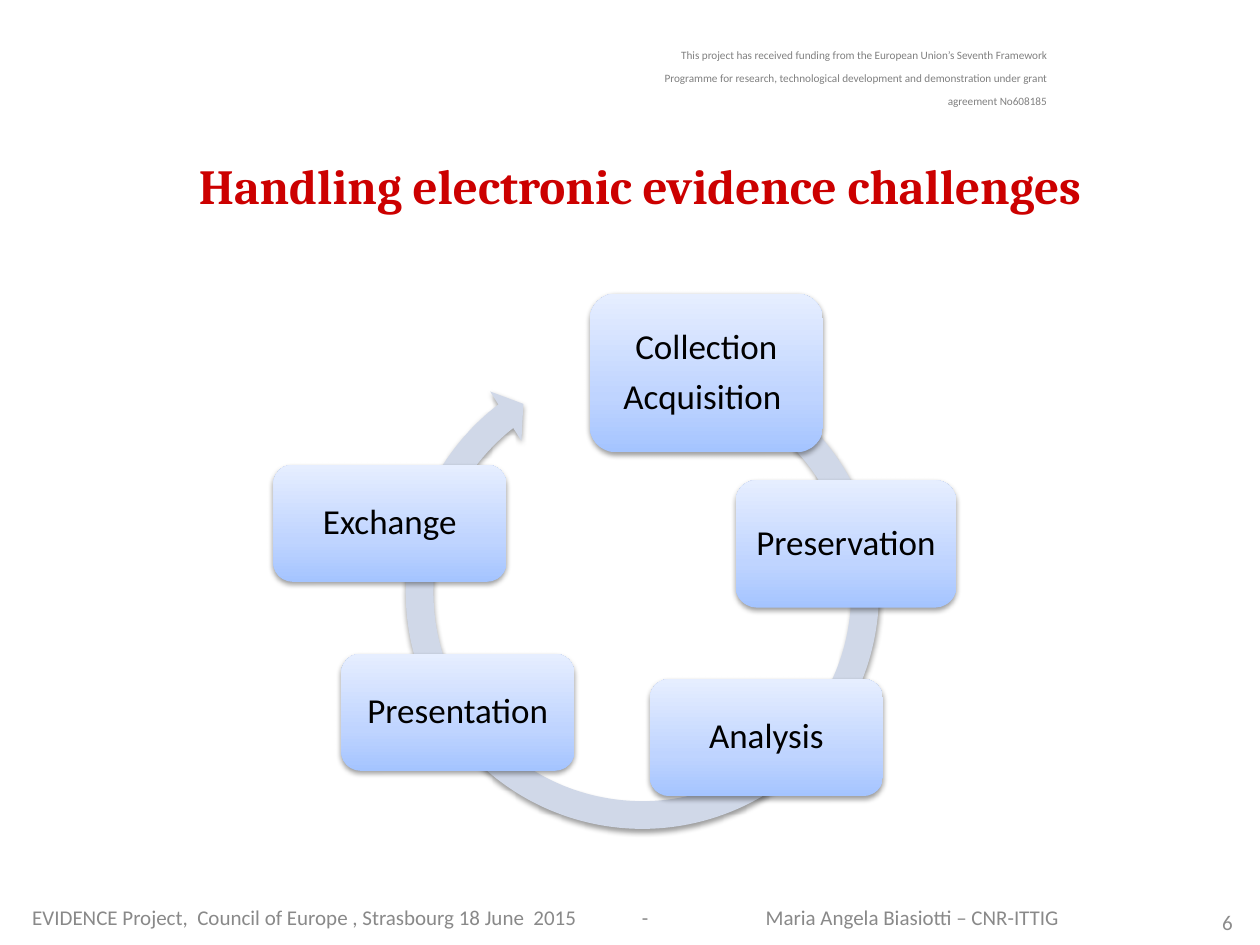
from copy import deepcopy

from pptx import Presentation
from pptx import util as u
from pptx.dml.color import RGBColor
from pptx.enum import shapes, text
from pptx.oxml import parse_xml
from pptx.oxml.ns import nsdecls, qn

LEFT, MID, RIGHT = text.PP_ALIGN.LEFT, text.PP_ALIGN.CENTER, text.PP_ALIGN.RIGHT
BLUES = ((0, "A4C4FF"), (0.35, "BFD4FF"), (1, "E6EEFF"))
STEPS = (
    (11.89, 5.92, 4.7, 3.2, ("Collection", "Acquisition ")),
    (14.83, 9.68, 4.45, 2.57, ("Preservation",)),
    (13.1, 13.69, 4.7, 2.36, ("Analysis",)),
    (6.88, 13.18, 4.7, 2.36, ("Presentation",)),
    (5.51, 9.37, 4.7, 2.36, ("Exchange",)),
)
NOTES = (
    (0.4, 12, "EVIDENCE Project,  Council of Europe , Strasbourg 18 June  2015"),
    (12.69, 1, "-"),
    (15.09, 8.6, " Maria Angela Biasiotti – CNR-ITTIG"),
)


def tint(code):
    return RGBColor.from_string(code)


def place(*vals):
    return [u.Cm(val) for val in vals]


def write(para, words, size, code, face="Calibri", bold=False):
    run = para.add_run()
    run.text = words
    font = run.font
    font.size, font.name, font.bold = u.Pt(size), face, bold
    font.color.rgb = tint(code)
    return run


def setup(frame, pad=None, anchor=text.MSO_ANCHOR.MIDDLE):
    frame.word_wrap = True
    frame.auto_size = text.MSO_AUTO_SIZE.NONE
    frame.vertical_anchor = anchor
    if pad is not None:
        frame.margin_left = frame.margin_right = u.Cm(pad)
        frame.margin_top = frame.margin_bottom = u.Cm(pad)


def label(slide, box, words, size, code, align, **opts):
    frame = slide.shapes.add_textbox(*place(*box)).text_frame
    setup(frame, **opts)
    para = frame.paragraphs[0]
    para.alignment = align
    return write(para, words, size, code)


def shade(shape):
    shape.shadow.inherit = False
    glow = shape._element.spPr.find(qn("a:effectLst"))
    glow.append(parse_xml(
        f'<a:outerShdw {nsdecls("a")} blurRad="{u.Pt(3.1)}" dist="{u.Pt(1.6)}" '
        'dir="5400000" rotWithShape="0"><a:srgbClr val="000000">'
        '<a:alpha val="38000"/></a:srgbClr></a:outerShdw>'))


def blend(fill):
    fill.gradient()
    fill.gradient_angle = 90
    first = fill.gradient_stops[0]._gs
    first.addnext(deepcopy(first))
    for stop, (spot, code) in zip(fill.gradient_stops, BLUES):
        stop.position = spot
        stop.color.rgb = tint(code)


def ring(slide):
    arrow = slide.shapes.add_shape(
        shapes.MSO_SHAPE.CIRCULAR_ARROW, *place(7.87, 6.86, 10.16, 10.16))
    for num, val in enumerate((0.055, 3.307, 139.325, 172.914, 0.058)):
        arrow.adjustments[num] = val
    arrow.fill.solid()
    arrow.fill.fore_color.rgb = tint("D0D8E8")
    arrow.line.fill.background()
    shade(arrow)


def step(slide, box, lines):
    card = slide.shapes.add_shape(
        shapes.MSO_SHAPE.ROUNDED_RECTANGLE, *place(*box))
    blend(card.fill)
    card.line.fill.background()
    shade(card)
    frame = card.text_frame
    setup(frame, pad=0.1)
    for num, line in enumerate(lines):
        para = frame.add_paragraph() if num else frame.paragraphs[0]
        para.alignment = MID
        para.line_spacing = 0.9
        para.space_after = u.Pt(7)
        write(para, line, 20, "000000")


def head(slide):
    title = slide.shapes.title
    title.left, title.top, title.width, title.height = place(3.1, 2.72, 19.6, 2)
    setup(title.text_frame)
    para = title.text_frame.paragraphs[0]
    para.alignment = MID
    write(para, "Handling electronic evidence challenges", 28, "CC0000", "Cambria", True)
    run = label(
        slide, (12.7, 0.93, 8.4, 1.2),
        "This project has received funding from the European Union’s Seventh Framework "
        "Programme for research, technological development and demonstration under grant "
        "agreement No608185",
        11, "808080", RIGHT, pad=0, anchor=text.MSO_ANCHOR.TOP)
    run._r.get_or_add_rPr().set("baseline", "30000")


def foot(slide):
    for left, width, words in NOTES:
        label(slide, (left, 17.93, width, 1.12), words, 12, "898989", LEFT)
    label(slide, (18.57, 18.03, 6.53, 1.12), "6", 12, "8C8C8C", RIGHT)


def main():
    deck = Presentation()
    deck.slide_width, deck.slide_height = place(25.4, 19.05)
    slide = deck.slides.add_slide(deck.slide_layouts[5])
    head(slide)
    ring(slide)
    for *box, lines in STEPS:
        step(slide, box, lines)
    foot(slide)
    deck.save("out.pptx")


if __name__ == "__main__":
    main()
